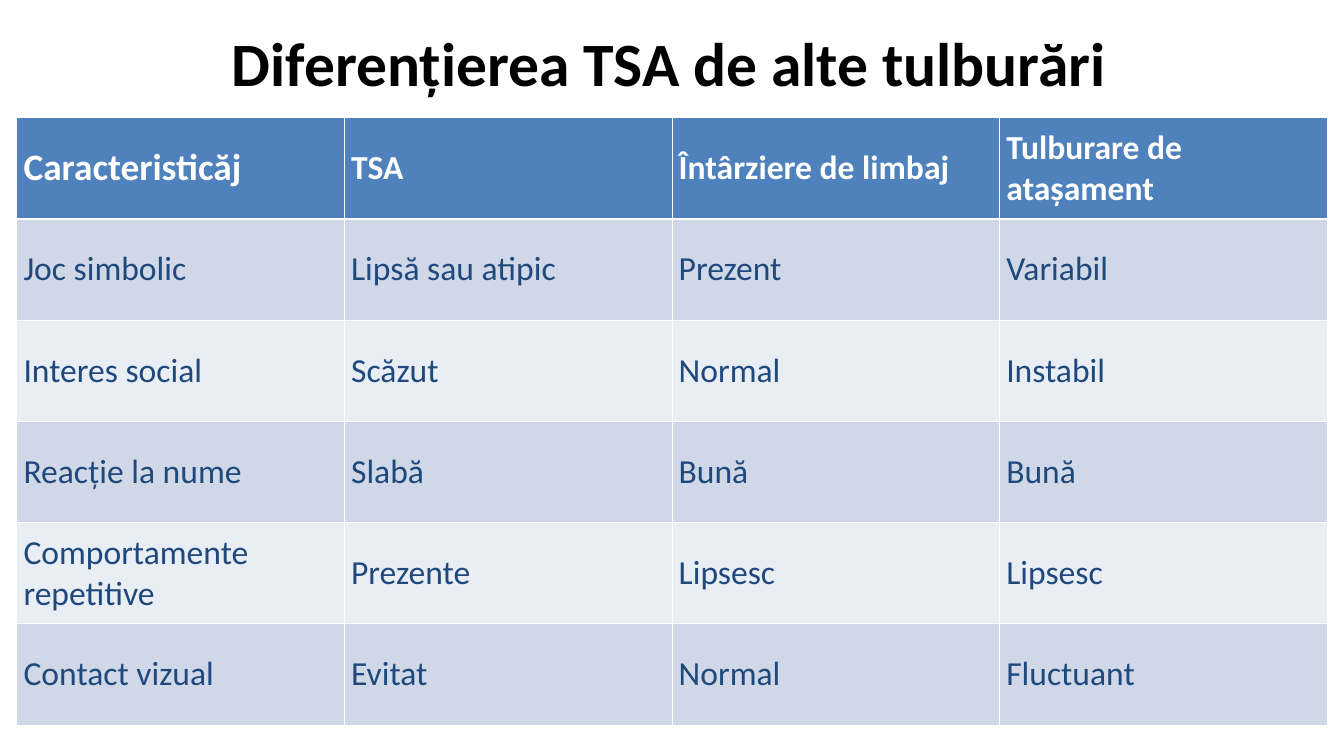
import pptx
import pptx.dml.color
import pptx.enum.text
import pptx.oxml
import pptx.oxml.ns
import pptx.util
from dataclasses import dataclass

PX = 9144  # EMU per px, 100 px to the inch
HEADERS = ["Caracteristicăj", "TSA", "Întârziere de limbaj", "Tulburare de atașament"]
ROWS = [
    ["Joc simbolic", "Lipsă sau atipic", "Prezent", "Variabil"],
    ["Interes social", "Scăzut", "Normal", "Instabil"],
    ["Reacție la nume", "Slabă", "Bună", "Bună"],
    ["Comportamente repetitive", "Prezente", "Lipsesc", "Lipsesc"],
    ["Contact vizual", "Evitat", "Normal", "Fluctuant"],
]


@dataclass(frozen=True)
class Theme:
    font: str = "Calibri"
    title: str = "000000"
    header_text: str = "FFFFFF"
    header_fill: str = "4F81BD"
    body_text: str = "1F497D"
    bands: tuple = ("D0D8E8", "E9EDF4")
    border: str = "FFFFFF"
    title_size: int = 66
    first_header_size: int = 40
    cell_size: int = 36
    border_width: int = 1
    header_rule: int = 3


def rgb(color):
    return pptx.dml.color.RGBColor.from_string(color)


class Deck:
    def __init__(self, slide, theme):
        self.s = slide
        self.theme = theme

    def run(self, p, text, size, color, bold=False):
        r = p.add_run()
        r.text = text
        r.font.name = self.theme.font
        r.font.size = pptx.util.Pt(size)
        r.font.bold = bold
        r.font.color.rgb = rgb(color)

    def title(self, text, x, y, w, h):
        sp = self.s.shapes.add_textbox(x * PX, y * PX, w * PX, h * PX)
        tf = sp.text_frame
        tf.word_wrap = True
        tf.vertical_anchor = pptx.enum.text.MSO_ANCHOR.MIDDLE
        p = tf.paragraphs[0]
        p.alignment = pptx.enum.text.PP_ALIGN.CENTER
        self.run(p, text, self.theme.title_size, self.theme.title, True)

    def borders(self, cell, top, bottom):
        tc_pr = cell._tc.get_or_add_tcPr()
        side = self.theme.border_width
        widths = {"lnL": side, "lnR": side, "lnT": top, "lnB": bottom}
        # Border lines come before the fill in the cell properties
        for i, (tag, width) in enumerate(widths.items()):
            line = pptx.oxml.parse_xml(
                f'<a:{tag} {pptx.oxml.ns.nsdecls("a")} w="{pptx.util.Pt(width)}">'
                f'<a:solidFill><a:srgbClr val="{self.theme.border}"/></a:solidFill></a:{tag}>')
            tc_pr.insert(i, line)

    def cell(self, cell, text, size, color, fill, bold, top, bottom):
        cell.fill.solid()
        cell.fill.fore_color.rgb = rgb(fill)
        cell.vertical_anchor = pptx.enum.text.MSO_ANCHOR.MIDDLE
        self.run(cell.text_frame.paragraphs[0], text, size, color, bold)
        self.borders(cell, top, bottom)

    def table(self, headers, rows, x, y, w, h):
        t = self.theme
        table = self.s.shapes.add_table(
            len(rows) + 1, len(headers), x * PX, y * PX, w * PX, h * PX).table

        # Header row
        for c, text in enumerate(headers):
            size = t.cell_size if c else t.first_header_size
            self.cell(table.cell(0, c), text, size, t.header_text, t.header_fill,
                      True, t.border_width, t.header_rule)

        # Banded body rows
        for i, row in enumerate(rows):
            top = t.border_width if i else t.header_rule
            for c, text in enumerate(row):
                self.cell(table.cell(i + 1, c), text, t.cell_size, t.body_text,
                          t.bands[i % 2], False, top, t.border_width)


def main():
    prs = pptx.Presentation()
    prs.slide_width = 2000 * PX
    prs.slide_height = 1125 * PX
    deck = Deck(prs.slides.add_slide(prs.slide_layouts[6]), Theme())

    # Title
    deck.title("Diferențierea TSA de alte tulburări", 50, 30, 1892, 125)

    # Comparison table
    deck.table(HEADERS, ROWS, 25, 175, 1950, 904)

    prs.save("out.pptx")


if __name__ == "__main__":
    main()
